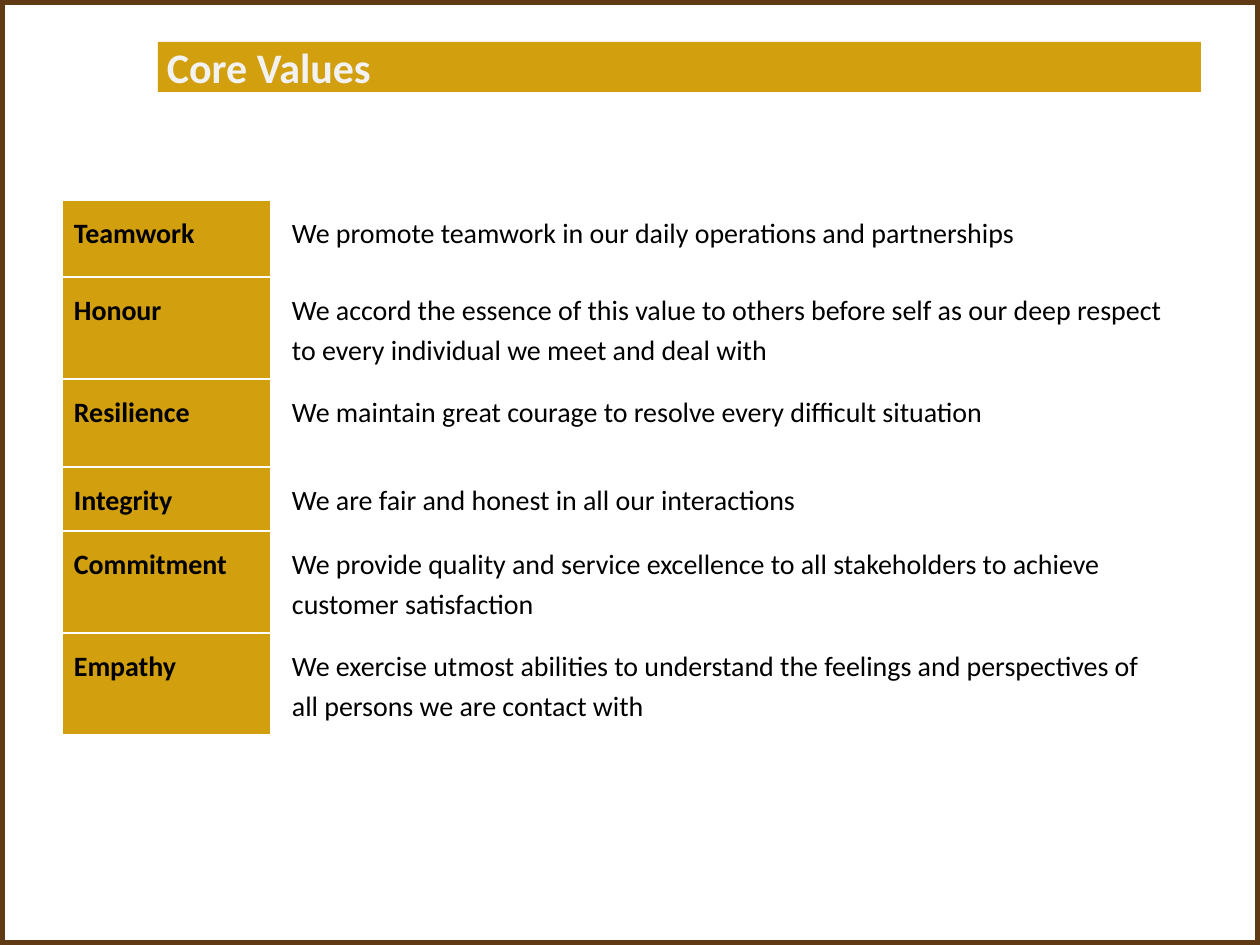
"""Build the Core Values slide: a framed page with a title bar and a table of values."""
from dataclasses import dataclass

from lxml import etree
from pptx import Presentation
from pptx import util as u
from pptx.dml.color import RGBColor
from pptx.enum import shapes, text
from pptx.oxml import ns


@dataclass(frozen=True)
class Theme:
    font: str = "Calibri"
    gold: str = "D29F0F"
    brown: str = "603A14"
    white: str = "FFFFFF"
    title_color: str = "F2F2F2"
    body_color: str = "000000"
    title_size: int = 24
    body_size: int = 16
    frame_width: int = 6
    border_width: int = 1


def px(length):
    return u.Emu(round(length * 914400 / 126))


def style_runs(paragraph, size, color, bold):
    for run in paragraph.runs:
        run.font.name = theme.font
        run.font.size = u.Pt(size)
        run.font.bold = bold
        run.font.color.rgb = RGBColor.from_string(color)


theme = Theme()
slide_width, slide_height = 1260, 945
values = [
    ("Teamwork", "We promote teamwork in our daily operations and partnerships", 77),
    ("Honour", "We accord the essence of this value to others before self as our deep respect "
     "to every individual we meet and deal with", 102),
    ("Resilience", "We maintain great courage to resolve every difficult situation", 88),
    ("Integrity", "We are fair and honest in all our interactions", 64),
    ("Commitment", "We provide quality and service excellence to all stakeholders to achieve "
     "customer satisfaction", 102),
    ("Empathy", "We exercise utmost abilities to understand the feelings and perspectives of "
     "\vall persons we are contact with", 102),
]
column_widths = (209, 929)
cell_margin, description_margin = 12, 21

presentation = Presentation()
presentation.slide_width = px(slide_width)
presentation.slide_height = px(slide_height)
slide = presentation.slides.add_slide(presentation.slide_layouts[6])
slide.background.fill.solid()
slide.background.fill.fore_color.rgb = RGBColor.from_string(theme.white)

frame = slide.shapes.add_shape(
    shapes.MSO_SHAPE.RECTANGLE, 0, 0, px(slide_width), px(slide_height))
frame.shadow.inherit = False
frame.fill.background()
frame.line.color.rgb = RGBColor.from_string(theme.brown)
frame.line.width = u.Pt(theme.frame_width)

title_bar = slide.shapes.add_textbox(px(158), px(42), px(1043), px(50))
title_bar.fill.solid()
title_bar.fill.fore_color.rgb = RGBColor.from_string(theme.gold)
title_frame = title_bar.text_frame
title_frame.word_wrap = True
title_frame.margin_left = px(9)
title_frame.margin_top = title_frame.margin_right = title_frame.margin_bottom = 0
title_frame.text = "Core Values"
style_runs(title_frame.paragraphs[0], theme.title_size, theme.title_color, True)

table = slide.shapes.add_table(
    len(values), len(column_widths), px(62), px(200),
    px(sum(column_widths)), px(sum(height for *_, height in values))).table
table.first_row = False
table.horz_banding = False
for column, width in zip(table.columns, column_widths):
    column.width = px(width)

for row, (name, description, height) in zip(table.rows, values):
    row.height = px(height)
    for cell, wording, is_name in zip(row.cells, (name, description), (True, False)):
        cell_properties = cell._tc.get_or_add_tcPr()
        for side in ("a:lnL", "a:lnR", "a:lnT", "a:lnB"):
            border = etree.SubElement(
                cell_properties, ns.qn(side), w=str(u.Pt(theme.border_width)))
            border_fill = etree.SubElement(border, ns.qn("a:solidFill"))
            etree.SubElement(border_fill, ns.qn("a:srgbClr"), val=theme.white)
        if is_name:
            cell.fill.solid()
            cell.fill.fore_color.rgb = RGBColor.from_string(theme.gold)
        else:
            cell.fill.background()
        cell.vertical_anchor = text.MSO_ANCHOR.TOP
        cell.margin_left = px(cell_margin if is_name else description_margin)
        cell.margin_top = cell.margin_right = cell.margin_bottom = px(cell_margin)
        paragraph = cell.text_frame.paragraphs[0]
        paragraph.text = wording
        paragraph.line_spacing = 1.15
        style_runs(paragraph, theme.body_size, theme.body_color, is_name)

presentation.save("out.pptx")
